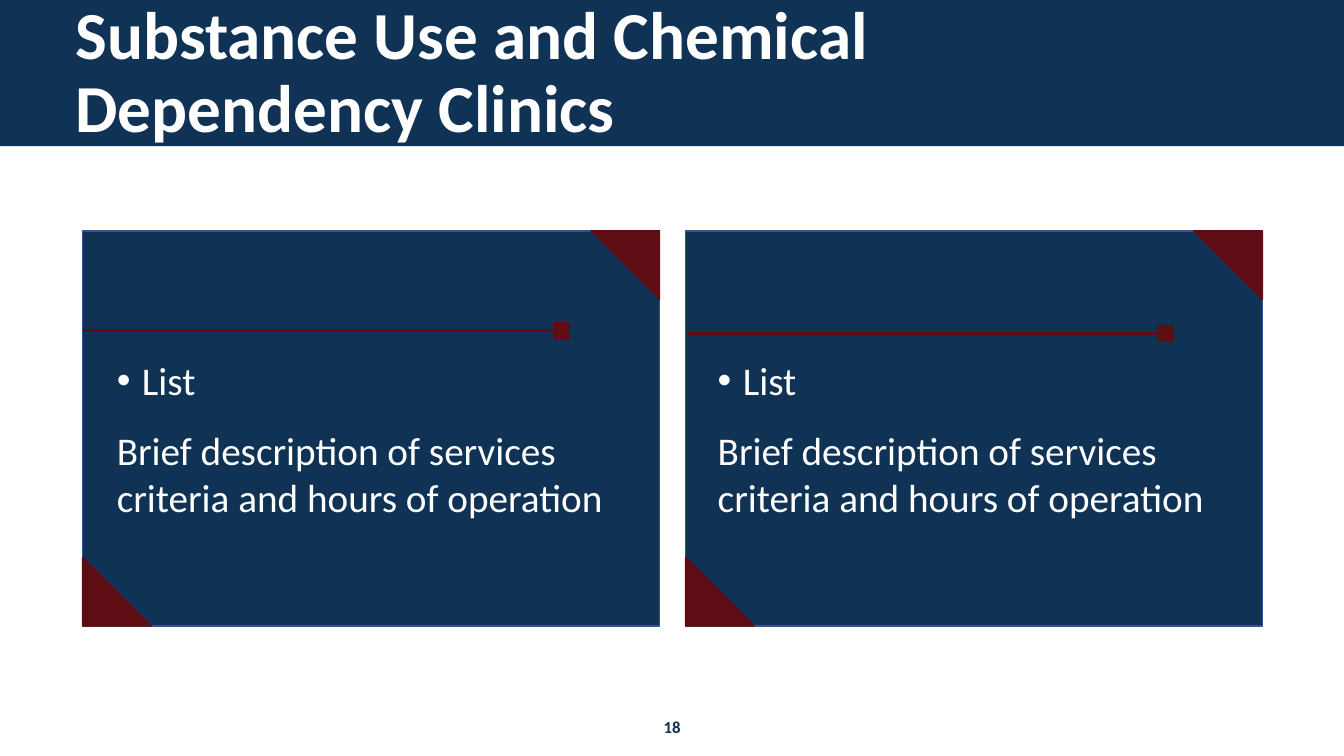
from dataclasses import dataclass

from lxml.etree import SubElement
from pptx import Presentation
from pptx.dml.color import RGBColor
from pptx.enum.shapes import MSO_CONNECTOR as Link, MSO_SHAPE as Form
from pptx.enum.text import MSO_ANCHOR as Anchor, MSO_AUTO_SIZE as Fit, PP_ALIGN as Align
from pptx.oxml.ns import qn
from pptx.shapes.autoshape import Shape
from pptx.slide import Slide
from pptx.text.text import _Paragraph as Para
from pptx.util import Emu, Pt

PX = 9144
NAVY = RGBColor(0x10, 0x32, 0x55)
BLUE = RGBColor(0x32, 0x54, 0x91)
WINE = RGBColor(0x5F, 0x0D, 0x14)
WHITE = RGBColor(0xFF, 0xFF, 0xFF)

TOP, WIDE, HIGH = 229, 572, 392
FOLD, KNOB, REACH = 68, 16, 467


@dataclass(frozen=True)
class Card:
    left: int
    rule_x: int
    rule_y: int
    text_x: int


CARDS = [Card(82, 82, 328, 106), Card(680, 681, 331, 702)]


def px(num: int) -> Emu:
    return Emu(num * PX)


def add_form(slide: Slide, form: Form, x: int, y: int, w: int, h: int,
             fill: RGBColor, edge: RGBColor | None = None) -> Shape:
    shape = slide.shapes.add_shape(form, px(x), px(y), px(w), px(h))
    shape.shadow.inherit = False
    shape.fill.solid()
    shape.fill.fore_color.rgb = fill
    if edge is None:
        shape.line.fill.background()
    else:
        shape.line.color.rgb = edge
        shape.line.width = Pt(1)
    return shape


def add_run(para: Para, text: str, size: int, color: RGBColor, bold: bool = False) -> None:
    run = para.add_run()
    run.text = text
    run.font.name = "Calibri"
    run.font.size = Pt(size)
    run.font.bold = bold
    run.font.color.rgb = color


def add_box(slide: Slide, x: int, y: int, w: int, h: int) -> Shape:
    box = slide.shapes.add_textbox(px(x), px(y), px(w), px(h))
    box.text_frame.word_wrap = True
    return box


def add_bullet(para: Para) -> None:
    props = para._p.get_or_add_pPr()
    props.set("marL", str(px(25)))
    props.set("indent", str(px(-25)))
    SubElement(props, qn("a:buFont")).set("typeface", "Arial")
    SubElement(props, qn("a:buChar")).set("char", "•")


def add_title(slide: Slide) -> None:
    title = slide.shapes.title
    title.left, title.top, title.width, title.height = map(px, (65, 40, 1020, 67))
    frame = title.text_frame
    frame.word_wrap = True
    frame.auto_size = Fit.NONE
    frame.vertical_anchor = Anchor.MIDDLE
    para = frame.paragraphs[0]
    para.alignment = Align.LEFT
    para.line_spacing = 0.9
    add_run(para, "Substance Use and Chemical Dependency Clinics", 48, WHITE, True)


def add_rule(slide: Slide, card: Card) -> None:
    end = card.rule_x + REACH
    rule = slide.shapes.add_connector(
        Link.STRAIGHT, px(card.rule_x), px(card.rule_y), px(end), px(card.rule_y))
    rule.line.color.rgb = WINE
    rule.line.width = Pt(2.25)
    SubElement(rule._element.spPr, qn("a:effectLst"))
    knob = add_form(slide, Form.RECTANGLE, end, card.rule_y - KNOB // 2,
                    KNOB, KNOB, WINE, WINE)
    rule.end_connect(knob, 1)


def add_card(slide: Slide, card: Card) -> None:
    add_form(slide, Form.RECTANGLE, card.left, TOP, WIDE, HIGH, NAVY, BLUE)
    fold = add_form(slide, Form.RIGHT_TRIANGLE, card.left + WIDE - FOLD, TOP,
                    FOLD, FOLD, WINE, WINE)
    fold.rotation = 180
    add_form(slide, Form.RIGHT_TRIANGLE, card.left, TOP + HIGH - FOLD,
             FOLD, FOLD, WINE, WINE)
    add_rule(slide, card)

    frame = add_box(slide, card.text_x, 349, 551, 98).text_frame
    head = frame.paragraphs[0]
    add_bullet(head)
    head.space_after = Pt(6)
    add_run(head, "List", 28, WHITE)
    body = frame.add_paragraph()
    body.space_before = Pt(10)
    body.space_after = Pt(6)
    add_run(body, "Brief description of services criteria and hours of operation", 28, WHITE)


def main() -> None:
    deck = Presentation()
    deck.slide_width, deck.slide_height = px(1333), px(750)
    slide = deck.slides.add_slide(deck.slide_layouts[5])

    band = add_form(slide, Form.RECTANGLE, 0, 0, 1333, 145, NAVY)
    slide.shapes.title._element.addprevious(band._element)
    add_title(slide)

    page = add_box(slide, 609, 706, 115, 30).text_frame.paragraphs[0]
    page.alignment = Align.CENTER
    add_run(page, "18", 12, NAVY, True)

    for card in CARDS:
        add_card(slide, card)
    deck.save("out.pptx")


if __name__ == "__main__":
    main()
